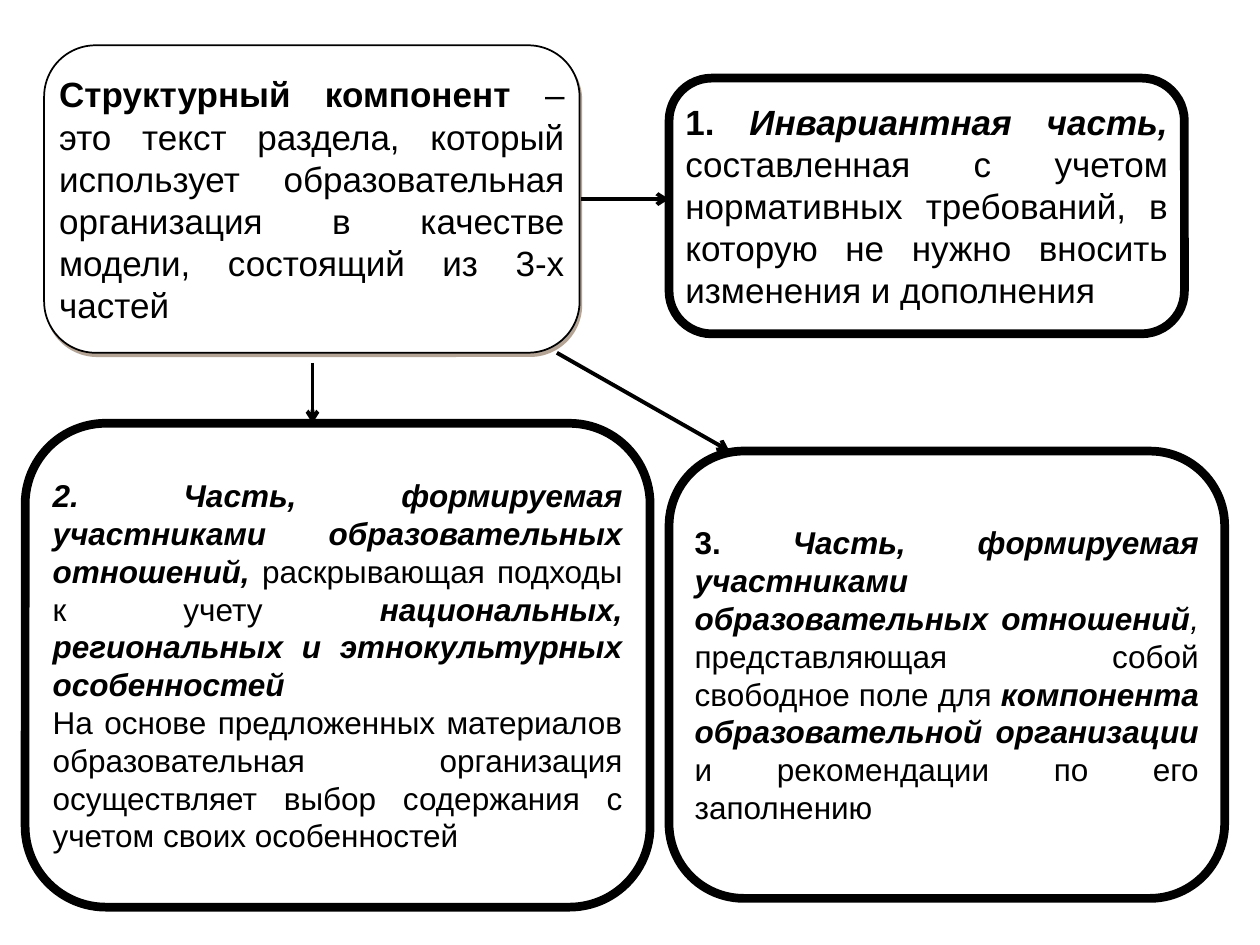
from lxml import etree
from pptx import Presentation
from pptx import util as u
from pptx.dml.color import RGBColor
from pptx.enum import shapes, text
from pptx.oxml.ns import qn

BLACK = RGBColor(0x00, 0x00, 0x00)
WHITE = RGBColor(0xFF, 0xFF, 0xFF)
SHADOW = RGBColor(0x6B, 0x4B, 0x2C)
FONT = "Arial"
INSET = 0.03

# Each box: place, line width, text size, side inset, paragraphs of (text, style);
# in a style, "b" is bold and "i" is italic
COMPONENT = ((0.35, 0.36, 4.25, 2.44), 1, 20, 0, [
    [("Структурный компонент ", "b"),
     ("– это текст раздела, который использует образовательная организация "
      "в качестве модели, состоящий из 3-х частей", "")],
])
PARTS = [
    ((5.31, 0.62, 4.09, 2.03), 5, 20, INSET, [
        [("1. ", "b"), ("Инвариантная часть, ", "bi"),
         ("составленная с учетом нормативных требований, в которую не нужно "
          "вносить изменения и дополнения", "")],
    ]),
    ((0.2, 3.36, 4.96, 3.84), 5, 18, INSET, [
        [("2. Часть, формируемая участниками образовательных отношений, ", "bi"),
         ("раскрывающая подходы к учету ", ""),
         ("национальных, региональных и этнокультурных особенностей ", "bi")],
        [("На основе предложенных материалов образовательная организация "
          "осуществляет выбор содержания с учетом своих особенностей", "")],
    ]),
    ((5.31, 3.58, 4.41, 3.55), 5, 18, INSET, [
        [("3. ", "b"),
         ("Часть, формируемая участниками образовательных отношений", "bi"),
         (", ", "i"), ("представляющая собой свободное поле для ", ""),
         ("компонента образовательной организации ", "bi"),
         ("и рекомендации по его заполнению", "")],
    ]),
]
ARROWS = [
    (4.61, 1.58, 5.31, 1.58),
    (4.42, 2.8, 5.79, 3.58),
    (2.48, 2.88, 2.48, 3.36),
]


def add_box(slide, place, line_width, size, side, paragraphs):
    sp = slide.shapes.add_shape(shapes.MSO_SHAPE.ROUNDED_RECTANGLE,
                                *map(u.Inches, place))
    sp.adjustments[0] = 0.167
    sp.shadow.inherit = False
    sp.fill.solid()
    sp.fill.fore_color.rgb = WHITE
    sp.line.color.rgb = BLACK
    sp.line.width = u.Pt(line_width)

    tf = sp.text_frame
    tf.word_wrap = True
    tf.vertical_anchor = text.MSO_ANCHOR.MIDDLE
    tf.margin_left = tf.margin_right = u.Inches(side)
    tf.margin_top = tf.margin_bottom = u.Inches(INSET)
    for i, runs in enumerate(paragraphs):
        p = tf.add_paragraph() if i else tf.paragraphs[0]
        p.alignment = text.PP_ALIGN.JUSTIFY
        p.font.name = FONT
        p.font.size = u.Pt(size)
        p.font.color.rgb = BLACK
        for words, style in runs:
            r = p.add_run()
            r.text = words
            r.font.bold = "b" in style
            r.font.italic = "i" in style
    return sp


def add_shadow(sp):
    effects = sp._element.spPr.find(qn("a:effectLst"))
    shadow = etree.SubElement(effects, qn("a:outerShdw"), dist=str(u.Pt(2.2)),
                              dir=str(63 * 60000), algn="ctr", rotWithShape="0")
    color = etree.SubElement(shadow, qn("a:srgbClr"), val=str(SHADOW))
    etree.SubElement(color, qn("a:alpha"), val="50000")


def add_arrow(slide, ends):
    line = slide.shapes.add_connector(shapes.MSO_CONNECTOR.STRAIGHT,
                                      *map(u.Inches, ends))
    line.line.color.rgb = BLACK
    line.line.width = u.Pt(2.25)
    etree.SubElement(line.line._get_or_add_ln(), qn("a:tailEnd"), type="arrow")
    etree.SubElement(line._element.spPr, qn("a:effectLst"))


def main():
    prs = Presentation()
    prs.slide_width, prs.slide_height = u.Inches(10), u.Inches(7.5)
    slide = prs.slides.add_slide(prs.slide_layouts[6])

    # The component and its three parts
    add_shadow(add_box(slide, *COMPONENT))
    for part in PARTS:
        add_box(slide, *part)

    # Arrows from the component to the parts
    for ends in ARROWS:
        add_arrow(slide, ends)

    prs.save("out.pptx")


if __name__ == "__main__":
    main()
